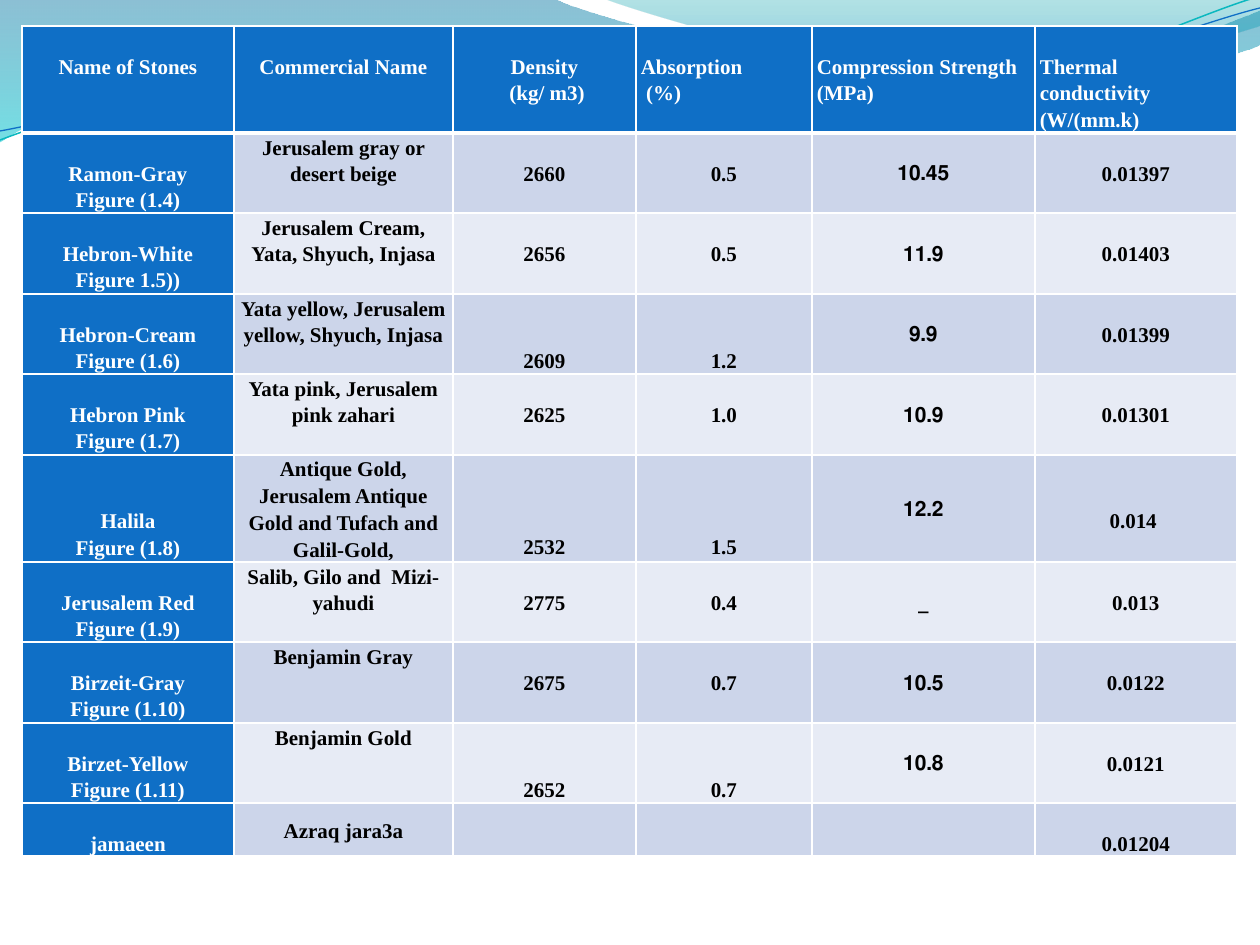
from copy import deepcopy

from lxml import etree
from pptx import Presentation
from pptx.dml.color import RGBColor
from pptx.enum import text
from pptx.oxml import ns
from pptx import util as u

WHITE = RGBColor(0xFF, 0xFF, 0xFF)
BLACK = RGBColor(0, 0, 0)
BLUE = RGBColor(0x0F, 0x6F, 0xC6)
TEAL = RGBColor(0x0A, 0xB8, 0xBF)
DARK_BAND = RGBColor(0xCC, 0xD5, 0xEA)
LIGHT_BAND = RGBColor(0xE7, 0xEB, 0xF5)
LAKE = RGBColor(0x00, 0x74, 0xA1)
AQUA = RGBColor(0x00, 0xC6, 0xCF)
LAGOON = RGBColor(0x00, 0xA1, 0xA9)
SKY = RGBColor(0x00, 0x8B, 0xBF)

LINE = 26
COLUMNS = [212, 219, 183, 176, 223, 202]
ROWS = [107, 80, 81, 80, 81, 107, 80, 81, 80, 53]
HEADINGS = ["Name of Stones", "Commercial Name", "Density\n (kg/ m3)", "Absorption\n (%)",
            "Compression Strength \n(MPa)", "Thermal conductivity\n(W/(mm.k)"]
STONES = [
    ["Ramon-Gray\nFigure (1.4)", "Jerusalem gray or desert beige", "2660", "0.5", "10.45", "0.01397"],
    ["Hebron-White\nFigure 1.5))", "Jerusalem Cream, Yata, Shyuch, Injasa", "2656", "0.5", "11.9", "0.01403"],
    ["Hebron-Cream\nFigure (1.6)", "Yata yellow, Jerusalem yellow, Shyuch, Injasa", "2609", "1.2", "9.9", "0.01399"],
    ["Hebron Pink\nFigure (1.7)", "Yata pink, Jerusalem pink zahari", "2625", "1.0", "10.9", "0.01301"],
    ["Halila\nFigure (1.8)", "Antique Gold, Jerusalem Antique Gold and Tufach and Galil-Gold,",
     "2532", "1.5", "12.2", "0.014 "],
    ["Jerusalem Red\nFigure (1.9)", "Salib, Gilo and  Mizi-yahudi", "2775", "0.4", "_", "0.013"],
    ["Birzeit-Gray\nFigure (1.10)", "Benjamin Gray", "2675", "0.7", "10.5", "0.0122"],
    ["Birzet-Yellow\nFigure (1.11)", "Benjamin Gold", "2652", "0.7", "10.8", "0.0121"],
    ["jamaeen", "Azraq jara3a", "", "", "", "0.01204"],
]
USUAL_DROP = [1, 0, 1, 1, 0, 1]
DROPS = {0: [1] * 6, 3: [1, 0, 2, 2, 0, 1], 5: [2, 0, 3, 3, 0, 2],
         8: [1, 0, 2, 2, 0, 1], 9: [1, 0, 0, 0, 0, 1]}

WAVE = [(0, 0), (554, -1), (600, 21, 837, 79, 955, 79), (1075, 79, 1207, 33, 1260, 11),
        (1261, 45), (1239, 55, 1096, 96, 940, 95), (784, 95, 481, 35, 324, 43),
        (163, 45, 58, 105, -1, 142)]
CREST = [(604, -1), (641, 14, 859, 78, 969, 82), (1079, 87, 1211, 40, 1260, 26), (1260, 0)]
TEAL_RIPPLE = [(0, 140), (60, 117, 199, 72, 349, 66), (498, 59, 747, 112, 898, 101),
               (1049, 89, 1182, 19, 1257, -3)]
BLUE_RIPPLE = [(0, 131), (59, 121, 207, 77, 357, 71), (508, 64, 752, 106, 903, 94),
               (1053, 84, 1187, 26, 1260, 8)]


def px(length):
    return u.Emu(round(length * 914400 / 126))


def write(frame, words, color=BLACK, align=text.PP_ALIGN.CENTER, rtl=False, font="Times New Roman"):
    paragraph = frame.paragraphs[0]
    paragraph.text = words
    paragraph.alignment = align
    paragraph.line_spacing = 1.15
    if rtl:
        paragraph._p.get_or_add_pPr().set("rtl", "1")
    for run in paragraph.runs:
        run.font.name, run.font.size, run.font.bold = font, u.Pt(12), True
        run.font.color.rgb = color
    for line_break in paragraph._p.findall(ns.qn("a:br")):
        line_break.insert(0, deepcopy(paragraph.runs[0]._r.rPr))


class StoneSlide:
    """Holds the current slide and draws its waves and table."""

    def __init__(self, deck):
        self.slide = deck.slides.add_slide(deck.slide_layouts[6])

    def outline(self, segments, close):
        points = [(px(s[i]), px(s[i + 1])) for s in segments for i in range(0, len(s), 2)]
        builder = self.slide.shapes.build_freeform(*points[0], scale=1.0)
        builder.add_line_segments(points[1:], close=close)
        shape = builder.convert_to_shape()
        shape.shadow.inherit = False
        legs = iter(list(shape._element.iter(ns.qn("a:lnTo"))))
        for segment in segments[1:]:
            leg = next(legs)
            if len(segment) == 6:
                leg.tag = ns.qn("a:cubicBezTo")
                for _ in range(2):
                    follower = next(legs)
                    leg.append(follower[0])
                    follower.getparent().remove(follower)
        return shape

    def wave(self, segments, stops):
        shape = self.outline(segments, close=True)
        shape.line.fill.background()
        shape.fill.gradient()
        shape.fill.gradient_angle = 270
        for stop, (position, color, opacity) in zip(shape.fill.gradient_stops, stops):
            stop.position, stop.color.rgb = position, color
            rgb = stop._gs.find(ns.qn("a:srgbClr"))
            etree.SubElement(rgb, ns.qn("a:alpha"), val=str(opacity * 1000))

    def ripple(self, segments, color, width):
        shape = self.outline(segments, close=False)
        shape.fill.background()
        shape.line.color.rgb, shape.line.width = color, u.Pt(width)

    def cell(self, cell, words, fill, drop=0, bottom=1, middle=False, **style):
        cell.margin_left = cell.margin_right = px(5)
        cell.margin_top, cell.margin_bottom = px(drop * LINE), 0
        cell.vertical_anchor = text.MSO_ANCHOR.MIDDLE if middle else text.MSO_ANCHOR.TOP
        for side, width in zip("LRTB", (1, 1, 1, bottom)):
            border = etree.SubElement(cell._tc.get_or_add_tcPr(), ns.qn("a:ln" + side), w=str(u.Pt(width)))
            paint = etree.SubElement(border, ns.qn("a:solidFill"))
            etree.SubElement(paint, ns.qn("a:srgbClr"), val=str(WHITE))
        cell.fill.solid()
        cell.fill.fore_color.rgb = fill
        if words:
            write(cell.text_frame, words, **style)

    def table(self, left, top):
        table = self.slide.shapes.add_table(len(ROWS), len(COLUMNS), px(left), px(top),
                                            px(sum(COLUMNS)), px(sum(ROWS))).table
        for column, width in zip(table.columns, COLUMNS):
            column.width = px(width)
        for row, height in zip(table.rows, ROWS):
            row.height = px(height)
        for r, stone in enumerate([HEADINGS] + STONES):
            band = DARK_BAND if r % 2 else LIGHT_BAND
            last = r == len(STONES)
            for c, words in enumerate(stone):
                heading = r == 0 or c == 0
                middle = r > 0 and (c == 4 or (last and c == 1))
                self.cell(table.cell(r, c), words, BLUE if heading else band,
                          drop=DROPS.get(r, USUAL_DROP)[c], bottom=1 if r else 3, middle=middle,
                          color=WHITE if heading else BLACK, rtl=middle or (r == 0 and c == 2),
                          align=text.PP_ALIGN.LEFT if r == 0 and c > 2 else text.PP_ALIGN.CENTER)


def main():
    deck = Presentation()
    deck.slide_width, deck.slide_height = px(1260), px(945)
    stones = StoneSlide(deck)
    stones.wave(WAVE, [(0, LAKE, 45), (1, AQUA, 55)])
    stones.wave(CREST, [(0, LAGOON, 30), (0.8, SKY, 45)])
    stones.ripple(TEAL_RIPPLE, TEAL, 0.85)
    stones.ripple(BLUE_RIPPLE, BLUE, 0.75)
    stones.table(22, 26)
    deck.save("out.pptx")


if __name__ == "__main__":
    main()
